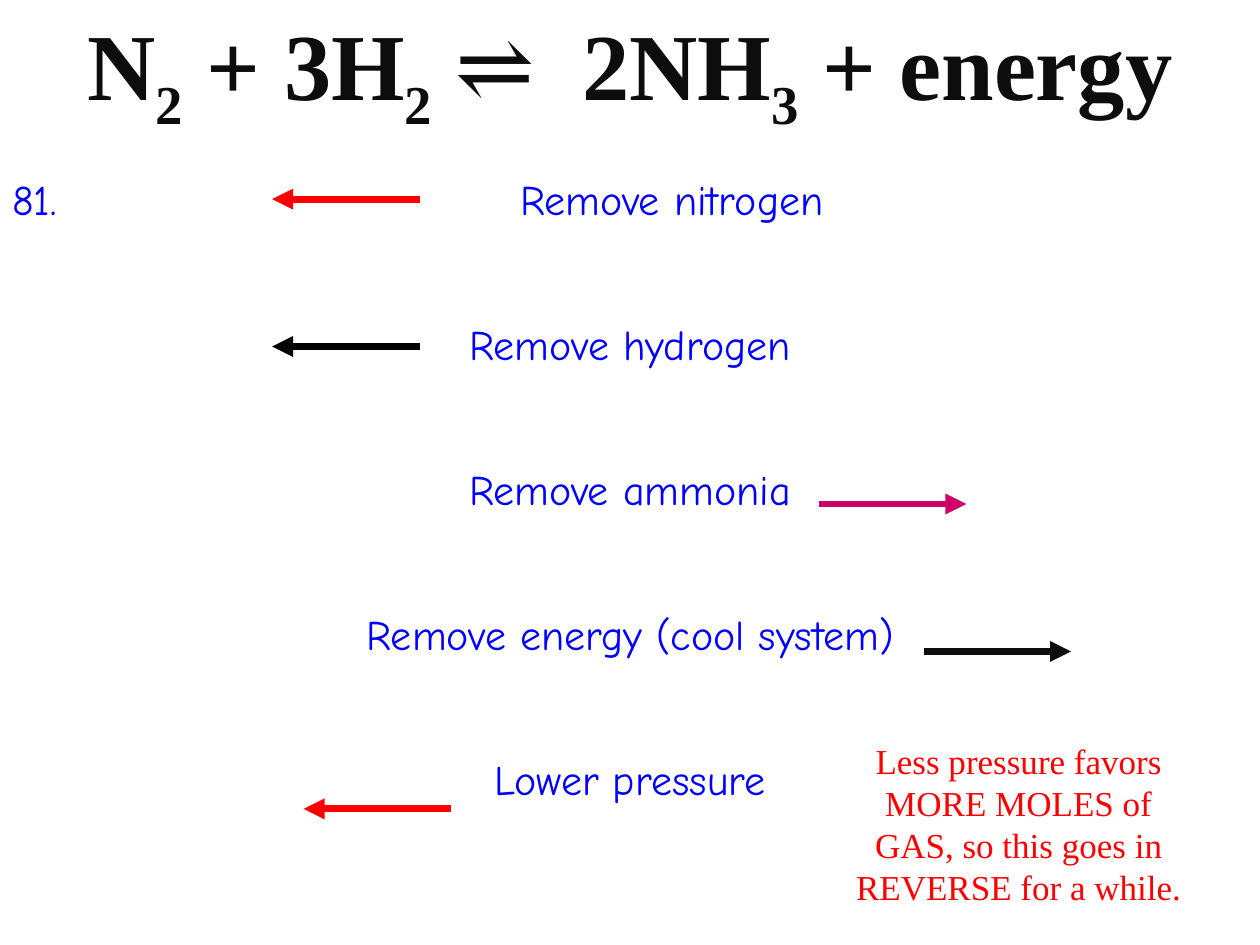
from lxml import etree
from pptx import Presentation
from pptx.dml.color import RGBColor
from pptx.enum.shapes import MSO_CONNECTOR
from pptx.enum.text import MSO_AUTO_SIZE, PP_ALIGN
from pptx.oxml.ns import qn
from pptx.util import Inches, Pt

INK = RGBColor(0x0D, 0x0D, 0x0D)
BLACK = RGBColor(0x00, 0x00, 0x00)
RED = RGBColor(0xFF, 0x00, 0x00)
BLUE = RGBColor(0x00, 0x00, 0xFF)
MAGENTA = RGBColor(0xCC, 0x00, 0x66)

SERIF = "Times New Roman"
HAND = "Comic Neue"
ARROW_LENGTH = 1.17
SUBSCRIPT = {"baseline": "-25000"}


class SlideBuilder:
    """Holds the style and the current slide."""

    def __init__(self, page):
        self.page = page
        self.formats = {
            "title": {"name": SERIF, "size": Pt(54), "bold": True},
            "label": {"name": HAND, "size": Pt(24)},
            "note": {"name": SERIF, "size": Pt(20)},
        }

    def text_box(self, left, top, width, height):
        box = self.page.shapes.add_textbox(
            Inches(left), Inches(top), Inches(width), Inches(height))
        frame = box.text_frame
        frame.word_wrap = True
        frame.auto_size = MSO_AUTO_SIZE.SHAPE_TO_FIT_TEXT
        return frame

    def span(self, para, text, style, color, attributes=None, **changes):
        span = para.add_run()
        span.text = text
        for name, value in {**self.formats[style], **changes}.items():
            setattr(span.font, name, value)
        span.font.color.rgb = color
        for name, value in (attributes or {}).items():
            span._r.get_or_add_rPr().set(name, value)

    def tab_stop(self, para, position):
        tabs = etree.SubElement(para._p.get_or_add_pPr(), qn("a:tabLst"))
        etree.SubElement(tabs, qn("a:tab"), pos=str(Inches(position)), algn="l")

    def arrow(self, start, y, direction, color):
        line = self.page.shapes.add_connector(
            MSO_CONNECTOR.STRAIGHT, Inches(start), Inches(y),
            Inches(start + direction * ARROW_LENGTH), Inches(y))
        line.line.width = Pt(4)
        line.line.color.rgb = color
        etree.SubElement(line.line._get_or_add_ln(), qn("a:tailEnd"), type="triangle")
        etree.SubElement(line._element.spPr, qn("a:effectLst"))


def main():
    deck = Presentation()
    deck.slide_width, deck.slide_height = Inches(10), Inches(7.5)
    builder = SlideBuilder(deck.slides.add_slide(deck.slide_layouts[6]))

    # Equilibrium equation
    para = builder.text_box(0, 0, 10, 1.01).paragraphs[0]
    para.alignment = PP_ALIGN.CENTER
    equation = [
        ("N", {}), ("2", SUBSCRIPT), (" + 3H", {}), ("2", SUBSCRIPT), (" ", {}),
        ("⇌", {"b": "0", "spc": "1350"}),
        (" 2NH", {}), ("3", SUBSCRIPT), (" + energy", {}),
    ]
    for text, attributes in equation:
        builder.span(para, text, "title", INK, attributes)

    # Changes made to the system
    frame = builder.text_box(0, 1.33, 10, 5.35)
    para = frame.paragraphs[0]
    builder.tab_stop(para, 4.03)
    builder.span(para, "81.\tRemove nitrogen", "label", BLUE)
    for text in ("Remove hydrogen", "Remove ammonia",
                 "Remove energy (cool system)", "Lower pressure"):
        para = frame.add_paragraph()
        para.alignment = PP_ALIGN.CENTER
        para.space_before = Pt(54)
        builder.span(para, text, "label", BLUE)

    # Direction of each shift
    for start, y, direction, color in (
            (3.33, 1.58, -1, RED), (3.33, 2.75, -1, BLACK),
            (6.5, 4, 1, MAGENTA), (7.33, 5.17, 1, INK), (3.58, 6.42, -1, RED)):
        builder.arrow(start, y, direction, color)

    # Explanation of the pressure change
    para = builder.text_box(6.67, 5.82, 2.83, 1.45).paragraphs[0]
    para.alignment = PP_ALIGN.CENTER
    builder.span(para, "Less pressure favors MORE MOLES of GAS, "
                 "so this goes in REVERSE for a while.", "note", RED)

    deck.save("out.pptx")


if __name__ == "__main__":
    main()
